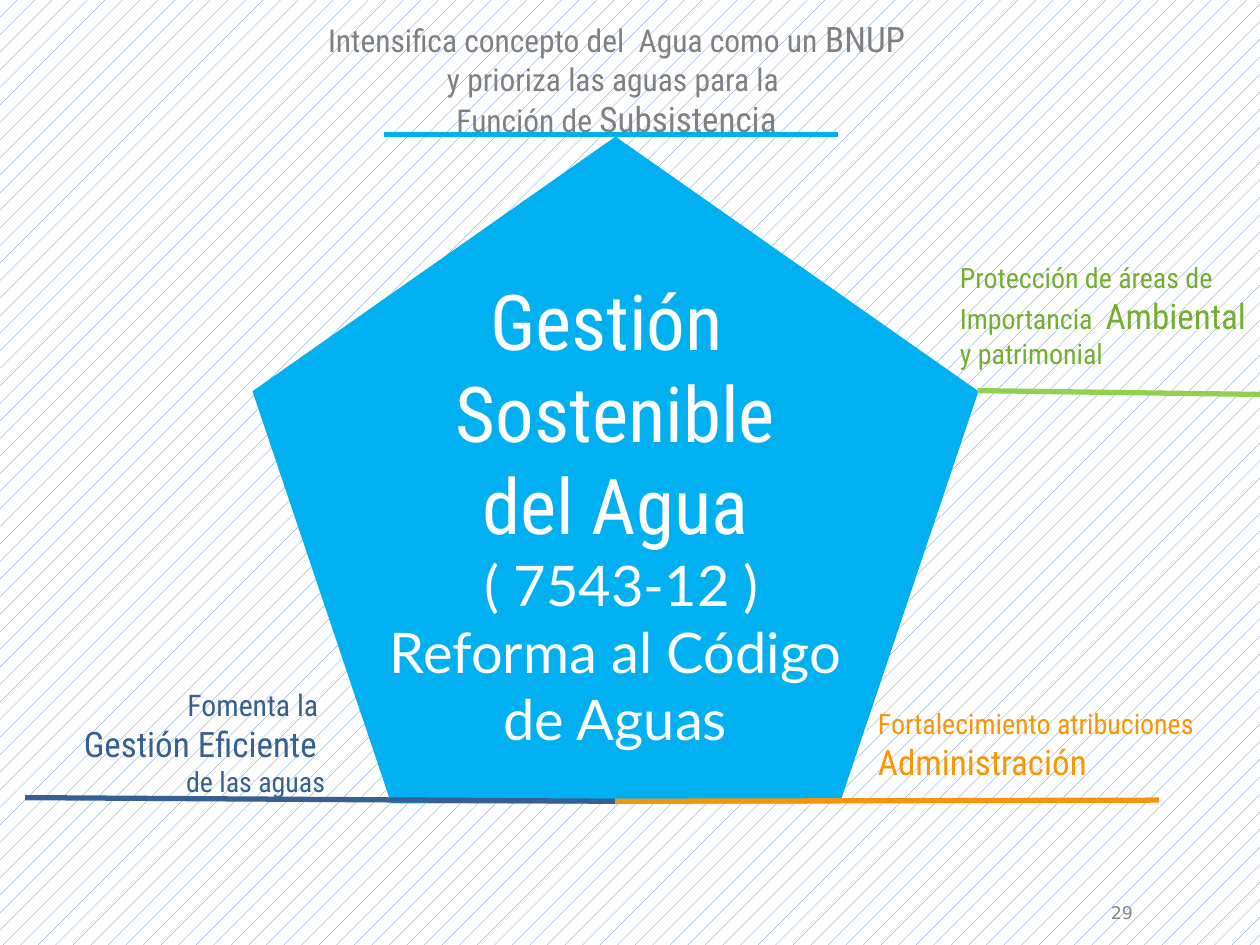
from dataclasses import dataclass

from lxml import etree
from pptx import Presentation
from pptx.dml.color import RGBColor
from pptx.enum import dml, shapes, text
from pptx.oxml import ns
from pptx.util import Pt

CONDENSED = "Roboto Condensed"
BLUE = "00B0F0"
LEFT, CENTER, RIGHT = text.PP_ALIGN.LEFT, text.PP_ALIGN.CENTER, text.PP_ALIGN.RIGHT


@dataclass
class Piece:
    """A stretch of text in one size and font."""
    content: str
    size: float
    font: str = CONDENSED


@dataclass
class Label:
    """A text box; each line is a list of pieces."""
    box: tuple[float, float, float, float]
    color: str
    align: text.PP_ALIGN
    lines: list[list[Piece]]
    wrap: bool = True
    anchor: text.MSO_ANCHOR = text.MSO_ANCHOR.TOP


@dataclass
class Rule:
    """A thick line leading from the pentagon to a label."""
    start: tuple[float, float]
    end: tuple[float, float]
    color: str


def rgb(color: str) -> RGBColor:
    return RGBColor.from_string(color)


def draw_label(slide, label: Label) -> None:
    frame = slide.shapes.add_textbox(*map(Pt, label.box)).text_frame
    frame.word_wrap = label.wrap
    frame.vertical_anchor = label.anchor
    for index, pieces in enumerate(label.lines):
        paragraph = frame.paragraphs[0] if index == 0 else frame.add_paragraph()
        paragraph.alignment = label.align
        for piece in pieces:
            run = paragraph.add_run()
            run.text = piece.content
            run.font.size = Pt(piece.size)
            run.font.name = piece.font
            run.font.color.rgb = rgb(label.color)


def draw_rule(slide, rule: Rule) -> None:
    connector = slide.shapes.add_connector(
        shapes.MSO_CONNECTOR.STRAIGHT, *map(Pt, rule.start + rule.end))
    connector.line.color.rgb = rgb(rule.color)
    connector.line.width = Pt(3)
    properties = connector._element.find(ns.qn("p:spPr"))
    etree.SubElement(properties, ns.qn("a:effectLst"))


def draw_pentagon(slide) -> None:
    pentagon = slide.shapes.add_shape(
        shapes.MSO_SHAPE.REGULAR_PENTAGON, *map(Pt, (144.7, 78.5, 414, 380.2)))
    pentagon.shadow.inherit = False
    pentagon.fill.solid()
    pentagon.fill.fore_color.rgb = rgb(BLUE)
    pentagon.line.color.rgb = rgb(BLUE)
    pentagon.line.width = Pt(0.75)


def draw_background(slide) -> None:
    fill = slide.background.fill
    fill.patterned()
    fill.pattern = dml.MSO_PATTERN.PERCENT_5
    fill.fore_color.rgb = rgb("4F81BD")
    fill.back_color.rgb = rgb("FFFFFF")


BASE = (351.4, 457.9)  # middle of the pentagon's base

RULES = [
    Rule((478.8, 77), (219.6, 77), BLUE),
    Rule((720, 225.4), (558.7, 223.2), "92D050"),
    Rule((662.4, 457.2), BASE, "F3960D"),
    Rule(BASE, (14.4, 455.8), "376092"),
]

LABELS = [
    # Slide number
    Label((486.7, 514.1, 167.8, 15.1), "898989", RIGHT,
          [[Piece("29", 10, "DejaVu Sans")]], anchor=text.MSO_ANCHOR.MIDDLE),
    # Top corner
    Label((133.9, 6.5, 437, 77.8), "808080", CENTER, [
        [Piece("Intensifica concepto del  Agua como un ", 18), Piece("BNUP", 20)],
        [Piece("y prioriza las aguas para la ", 18)],
        [Piece("Función de ", 18), Piece("Subsistencia", 20)]]),
    # Right corner
    Label((541.4, 145.4, 193, 92.2), "72AF2F", LEFT, [
        [Piece("Protección de áreas de", 16)],
        [Piece("Importancia  ", 16), Piece("Ambiental", 20)],
        [Piece("y patrimonial", 16)]]),
    # Bottom right corner
    Label((494.6, 400.3, 245.5, 51.1), "F89606", LEFT, [
        [Piece("Fortalecimiento atribuciones", 16)],
        [Piece("Administración", 20)]]),
    # Centre of the pentagon
    Label((213.1, 152.6, 277.2, 322.6), "FFFFFF", CENTER, [
        [Piece("Gestión ", 44)],
        [Piece("Sostenible", 44)],
        [Piece("del Agua", 44)],
        [Piece(" ", 32), Piece("( 7543-12 )", 32, "Lato")],
        [Piece("Reforma al Código ", 32, "Lato")],
        [Piece("de Aguas", 32, "Lato")]], wrap=False),
    # Bottom left corner
    Label((8.6, 388.8, 184.3, 71.3), "376092", RIGHT, [
        [Piece("Fomenta la ", 17)],
        [Piece("Gestión Eficiente ", 20)],
        [Piece("de las aguas", 16)]]),
]


def main() -> None:
    presentation = Presentation()
    presentation.slide_width, presentation.slide_height = Pt(720), Pt(540)
    slide = presentation.slides.add_slide(presentation.slide_layouts[6])
    draw_background(slide)
    draw_pentagon(slide)
    for label in LABELS:
        draw_label(slide, label)
    for rule in RULES:
        draw_rule(slide, rule)
    presentation.save("out.pptx")


if __name__ == "__main__":
    main()
